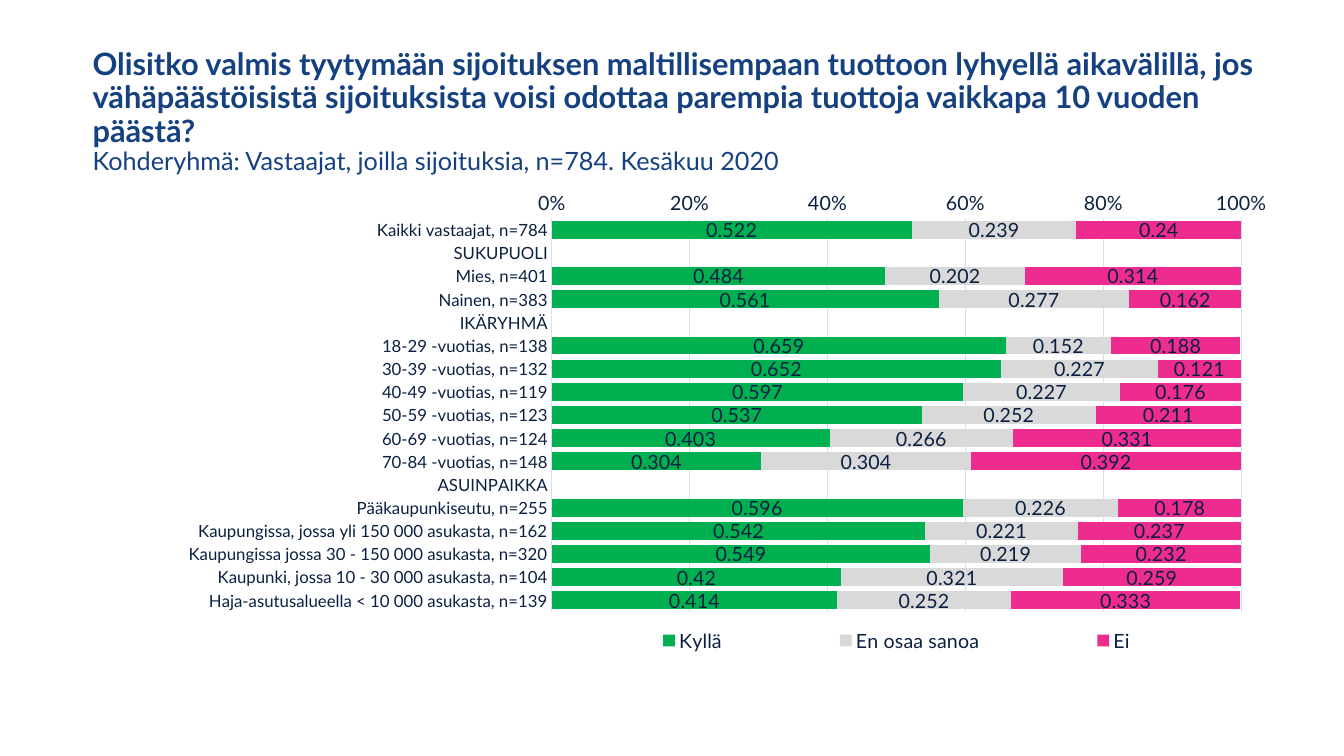
from dataclasses import dataclass

from lxml.etree import SubElement
from pptx import Presentation
from pptx.chart.data import CategoryChartData
from pptx.dml.color import RGBColor
from pptx.enum.chart import XL_CHART_TYPE, XL_LEGEND_POSITION, XL_TICK_MARK
from pptx.enum.text import MSO_ANCHOR
from pptx.oxml.ns import qn
from pptx.util import Inches, Pt


@dataclass(frozen=True)
class Theme:
    face: str = "Lato"
    title: str = "164180"
    ink: str = "0B2040"
    grid: str = "D1E0F7"
    bars: tuple = ("00B050", "D9D9D9", "EE2C90")
    head: int = 22
    sub: int = 18
    body: int = 14
    small: int = 12
    hair: float = 0.75


THEME = Theme()
HEAD = ("Olisitko valmis tyytymään sijoituksen maltillisempaan tuottoon "
        "lyhyellä aikavälillä, jos vähäpäästöisistä sijoituksista voisi "
        "odottaa parempia tuottoja vaikkapa 10 vuoden päästä?")
SUB = "Kohderyhmä: Vastaajat, joilla sijoituksia, n=784. Kesäkuu 2020"
NAMES = ("Kyllä", "En osaa sanoa", "Ei")
GAP = (None, None, None)
ROWS = (
    ("Kaikki vastaajat, n=784", (0.522, 0.239, 0.24)),
    ("SUKUPUOLI", GAP),
    ("Mies, n=401", (0.484, 0.202, 0.314)),
    ("Nainen, n=383", (0.561, 0.277, 0.162)),
    ("IKÄRYHMÄ", GAP),
    ("18-29 -vuotias, n=138", (0.659, 0.152, 0.188)),
    ("30-39 -vuotias, n=132", (0.652, 0.227, 0.121)),
    ("40-49 -vuotias, n=119", (0.597, 0.227, 0.176)),
    ("50-59 -vuotias, n=123", (0.537, 0.252, 0.211)),
    ("60-69 -vuotias, n=124", (0.403, 0.266, 0.331)),
    ("70-84 -vuotias, n=148", (0.304, 0.304, 0.392)),
    ("ASUINPAIKKA", GAP),
    ("Pääkaupunkiseutu, n=255", (0.596, 0.226, 0.178)),
    ("Kaupungissa, jossa yli 150 000 asukasta, n=162", (0.542, 0.221, 0.237)),
    ("Kaupungissa jossa 30 - 150 000 asukasta, n=320", (0.549, 0.219, 0.232)),
    ("Kaupunki, jossa 10 - 30 000 asukasta, n=104", (0.42, 0.321, 0.259)),
    ("Haja-asutusalueella < 10 000 asukasta, n=139", (0.414, 0.252, 0.333)),
)


def apply(item, values):
    for name, value in values.items():
        setattr(item, name, value)


def style(font, size, color=THEME.ink, bold=False):
    apply(font, {"name": THEME.face, "size": Pt(size), "bold": bold})
    font.color.rgb = RGBColor.from_string(color)


def rule(line):
    line.color.rgb = RGBColor.from_string(THEME.grid)
    line.width = Pt(THEME.hair)


def place(host, index, box, inner=False):
    """Give a chart part a manual layout, as shares of the chart."""
    for old in host.findall(qn("c:layout")):
        host.remove(old)
    layout = SubElement(host, qn("c:layout"))
    host.insert(index, layout)
    manual = SubElement(layout, qn("c:manualLayout"))
    parts = [("layoutTarget", "inner")] if inner else []
    parts += [("xMode", "edge"), ("yMode", "edge"), *zip("xywh", box)]
    for tag, value in parts:
        SubElement(manual, qn(f"c:{tag}")).set("val", str(value))


def add_title(slide, box):
    frame = slide.shapes.add_textbox(*map(Inches, box)).text_frame
    apply(frame, {"word_wrap": True, "vertical_anchor": MSO_ANCHOR.MIDDLE})
    para = frame.paragraphs[0]
    para.line_spacing = 0.9
    head = para.add_run()
    head.text = HEAD
    style(head.font, THEME.head, THEME.title, True)
    para.add_line_break()
    sub = para.add_run()
    sub.text = SUB
    style(sub.font, THEME.sub, THEME.title)


def set_axes(chart):
    ticks = {"major_tick_mark": XL_TICK_MARK.NONE,
             "minor_tick_mark": XL_TICK_MARK.NONE}
    cats, vals = chart.category_axis, chart.value_axis
    apply(cats, {**ticks, "reverse_order": True, "has_major_gridlines": False})
    style(cats.tick_labels.font, THEME.small)
    rule(cats.format.line)
    apply(vals, {**ticks, "minimum_scale": 0, "maximum_scale": 1,
                 "major_unit": 0.2, "has_major_gridlines": True})
    apply(vals.tick_labels, {"number_format": "0%",
                             "number_format_is_linked": False})
    style(vals.tick_labels.font, THEME.body)
    vals.format.line.fill.background()
    rule(vals.major_gridlines.format.line)


def set_bars(plot):
    apply(plot, {"gap_width": 30, "overlap": 100, "vary_by_categories": False})
    for series, color in zip(plot.series, THEME.bars):
        series.format.fill.solid()
        series.format.fill.fore_color.rgb = RGBColor.from_string(color)
        labels = series.data_labels
        apply(labels, {"show_value": True, "number_format": "General",
                       "number_format_is_linked": False})
        style(labels.font, THEME.body)


def add_bars(slide, box):
    data = CategoryChartData()
    data.categories = [label for label, _ in ROWS]
    for name, values in zip(NAMES, zip(*(row for _, row in ROWS))):
        data.add_series(name, values)
    chart = slide.shapes.add_chart(
        XL_CHART_TYPE.BAR_STACKED, *map(Inches, box), data).chart
    apply(chart, {"has_title": False, "has_legend": True})
    style(chart.font, THEME.body)
    set_axes(chart)
    set_bars(chart.plots[0])
    legend = chart.legend
    apply(legend, {"position": XL_LEGEND_POSITION.BOTTOM,
                   "include_in_layout": False})
    style(legend.font, THEME.body)
    left, wide = 0.394, 0.579
    area = chart.element.find(".//" + qn("c:plotArea"))
    place(area, 0, (left, 0.063, wide, 0.757), inner=True)
    key = chart.element.find(".//" + qn("c:legend"))
    place(key, 1, (left, 0.84, wide, 0.07))


def main():
    deck = Presentation()
    apply(deck, {"slide_width": Inches(13.33), "slide_height": Inches(7.5)})
    slide = deck.slides.add_slide(deck.slide_layouts[6])
    add_title(slide, (0.82, 0.39, 12.11, 1.45))
    add_bars(slide, (0.82, 1.84, 11.81, 5.16))
    deck.save("out.pptx")


if __name__ == "__main__":
    main()
